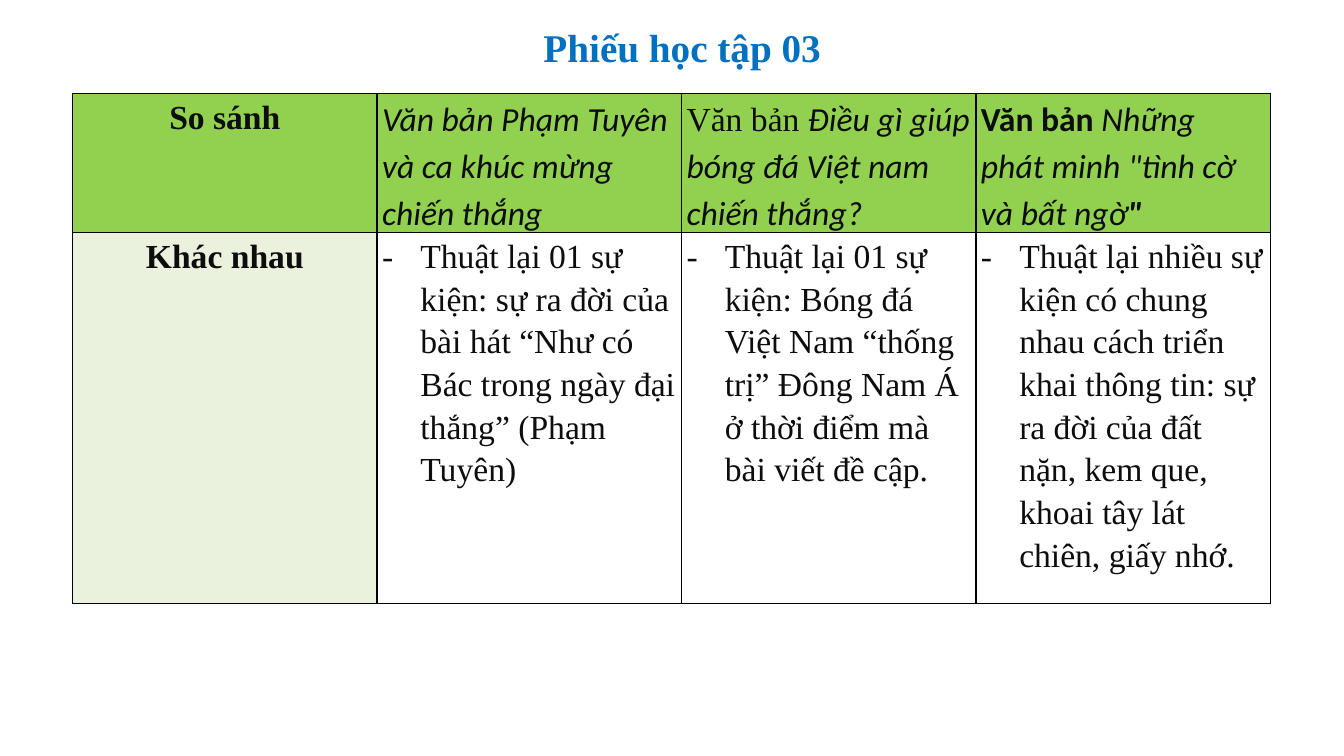
from lxml import etree
from pptx import Presentation
from pptx.dml.color import RGBColor
from pptx.enum.text import MSO_ANCHOR, MSO_AUTO_SIZE, PP_ALIGN
from pptx.oxml.ns import qn
from pptx.util import Inches, Pt

COLORS = {
    "title": "0070C0",
    "text": "0D0D0D",
    "header": "92D050",
    "label": "EAF1DD",
    "border": "000000",
}
SERIF = "Times New Roman"
SANS = "Calibri"
COL_WIDTHS = [3.02, 3.02, 2.92, 2.92]
ROW_HEIGHTS = [1.38, 3.68]

HEADERS = [
    [("So sánh", SERIF, True, False)],
    [("Văn bản Phạm Tuyên và ca khúc mừng chiến thắng", SANS, False, True)],
    [
        ("Văn bản ", SERIF, False, False),
        ("Điều gì giúp bóng đá Việt nam chiến thắng?", SANS, False, True),
    ],
    [
        ("Văn bản ", SANS, True, False),
        ('Những phát minh "tình cờ và bất ngờ', SANS, False, True),
        ('"', SANS, True, True),
    ],
]
DIFFERENCES = [
    [("Khác nhau", SERIF, True, False)],
    [("Thuật lại 01 sự kiện: sự ra đời của bài hát “Như có Bác trong ngày "
      "đại thắng” (Phạm Tuyên)", SERIF, False, False)],
    [("Thuật lại 01 sự kiện: Bóng đá Việt Nam “thống trị” Đông Nam Á ở thời "
      "điểm mà bài viết đề cập.", SERIF, False, False)],
    [("Thuật lại nhiều sự kiện có chung nhau cách triển khai thông tin: sự ra "
      "đời của đất nặn, kem que, khoai tây lát chiên, giấy nhớ.",
      SERIF, False, False)],
]


def style_run(r, font, size, color, bold, italic=False):
    r.font.name = font
    r.font.size = Pt(size)
    r.font.bold = bold
    r.font.italic = italic
    r.font.color.rgb = RGBColor.from_string(COLORS[color])


def add_title(s, text):
    sp = s.shapes.title
    sp.left, sp.top = Inches(5.29), Inches(0.18)
    sp.width, sp.height = Inches(2.99), Inches(0.57)
    tf = sp.text_frame
    tf.text = text
    tf.word_wrap = False
    tf.auto_size = MSO_AUTO_SIZE.SHAPE_TO_FIT_TEXT
    tf.vertical_anchor = MSO_ANCHOR.TOP
    p = tf.paragraphs[0]
    p.alignment = PP_ALIGN.LEFT
    style_run(p.runs[0], SERIF, 28, "title", True)


def add_borders(cell):
    tc_pr = cell._tc.get_or_add_tcPr()
    for side in ("lnL", "lnR", "lnT", "lnB"):
        ln = etree.SubElement(tc_pr, qn(f"a:{side}"), w=str(Pt(1)))
        fill = etree.SubElement(ln, qn("a:solidFill"))
        etree.SubElement(fill, qn("a:srgbClr"), val=COLORS["border"])


def add_dash(p):
    p_pr = p._p.get_or_add_pPr()
    p_pr.set("marL", str(Inches(0.38)))
    p_pr.set("indent", str(Inches(-0.38)))
    etree.SubElement(p_pr, qn("a:buFont"), typeface=SERIF)
    etree.SubElement(p_pr, qn("a:buChar"), char="-")


def fill_cell(cell, runs, fill=None, centered=False, dashed=False):
    add_borders(cell)
    if fill:
        cell.fill.solid()
        cell.fill.fore_color.rgb = RGBColor.from_string(COLORS[fill])
    else:
        cell.fill.background()
    cell.margin_left = cell.margin_right = Inches(0.05)
    cell.margin_top = cell.margin_bottom = Inches(0)
    p = cell.text_frame.paragraphs[0]
    if dashed:
        add_dash(p)
    p.alignment = PP_ALIGN.CENTER if centered else PP_ALIGN.LEFT
    p.line_spacing = 1.15
    p.space_after = Pt(0 if dashed else 10)
    for text, font, bold, italic in runs:
        r = p.add_run()
        r.text = text
        style_run(r, font, 24, "text", bold, italic)


def add_comparison(s):
    table = s.shapes.add_table(
        len(ROW_HEIGHTS), len(COL_WIDTHS), Inches(0.72), Inches(0.93),
        Inches(sum(COL_WIDTHS)), Inches(sum(ROW_HEIGHTS))).table
    for column, width in zip(table.columns, COL_WIDTHS):
        column.width = Inches(width)
    for row, height in zip(table.rows, ROW_HEIGHTS):
        row.height = Inches(height)
    for col, runs in enumerate(HEADERS):
        fill_cell(table.cell(0, col), runs, "header", centered=col == 0)
    for col, runs in enumerate(DIFFERENCES):
        is_label = col == 0
        fill_cell(table.cell(1, col), runs, "label" if is_label else None,
                  centered=is_label, dashed=not is_label)


def main():
    prs = Presentation()
    prs.slide_width, prs.slide_height = Inches(13.33), Inches(7.5)
    s = prs.slides.add_slide(prs.slide_layouts[5])
    add_title(s, "Phiếu học tập 03")
    add_comparison(s)
    prs.save("out.pptx")


if __name__ == "__main__":
    main()
